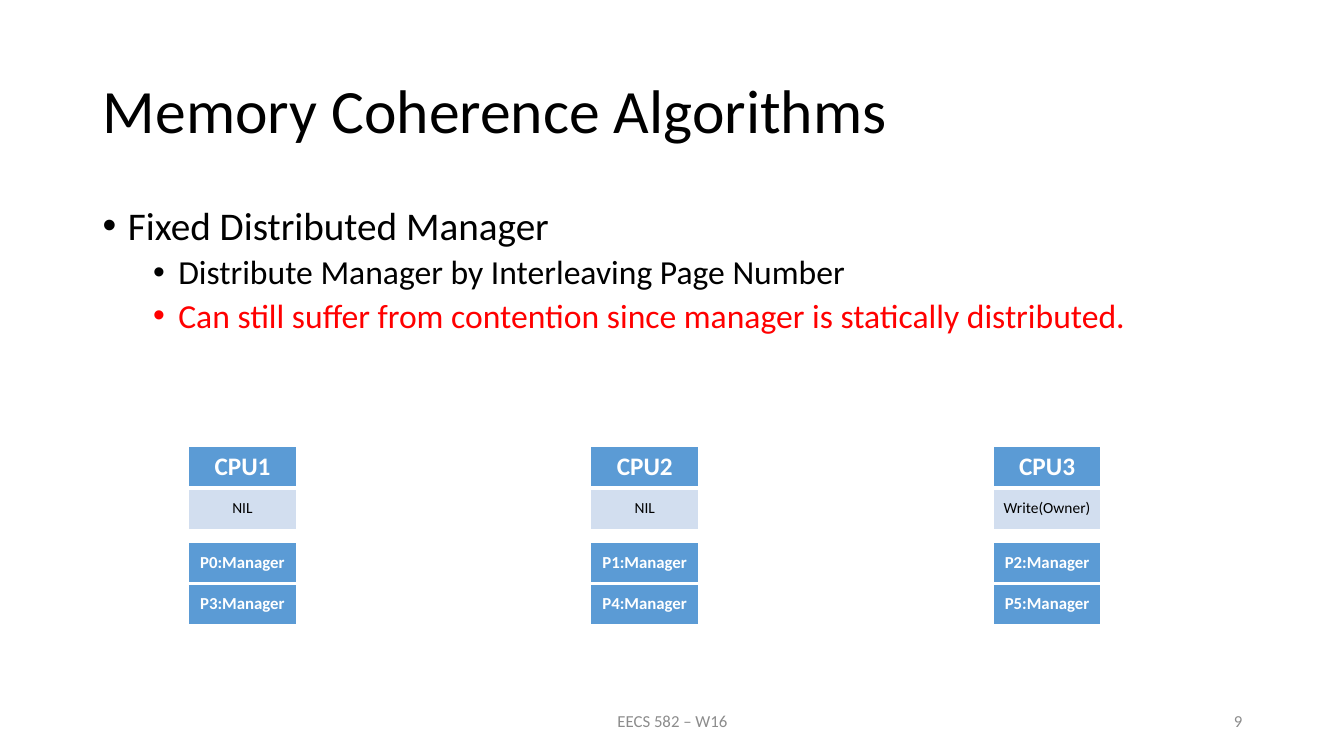
from dataclasses import dataclass

from lxml import etree
from pptx import Presentation
from pptx.dml.color import RGBColor
from pptx.enum.text import MSO_ANCHOR, MSO_AUTO_SIZE, PP_ALIGN
from pptx.oxml.ns import qn
from pptx.util import Pt

PX = 9144
TOP, MIDDLE = MSO_ANCHOR.TOP, MSO_ANCHOR.MIDDLE
LEFT, CENTER, RIGHT = PP_ALIGN.LEFT, PP_ALIGN.CENTER, PP_ALIGN.RIGHT
NO_FIT = MSO_AUTO_SIZE.NONE


@dataclass(frozen=True)
class Theme:
    font: str = "Calibri"
    black: str = "000000"
    white: str = "FFFFFF"
    red: str = "FF0000"
    gray: str = "8C8C8C"
    blue: str = "5B9BD5"
    pale: str = "D2DEEF"
    title: int = 44
    lead: int = 28
    point: int = 24
    head: int = 18
    small: int = 12
    state: int = 11


THEME = Theme()

POINTS = [
    ("Fixed Distributed Manager", 0, THEME.black),
    ("Distribute Manager by Interleaving Page Number", 1, THEME.black),
    ("Can still suffer from contention since manager is statically distributed.",
     1, THEME.red),
]
NODES = [
    ("CPU1", "NIL", "P0:Manager", "P3:Manager"),
    ("CPU2", "NIL", "P1:Manager", "P4:Manager"),
    ("CPU3", "Write(Owner)", "P2:Manager", "P5:Manager"),
]


def scale(*sizes):
    return [size * PX for size in sizes]


def style(para, size, color, bold=False, align=LEFT):
    para.alignment = align
    for run in para.runs:
        run.font.name = THEME.font
        run.font.size = Pt(size)
        run.font.bold = bold
        run.font.color.rgb = RGBColor.from_string(color)


def add_title(slide, text):
    title = slide.shapes.title
    title.left, title.top, title.width, title.height = scale(92, 40, 1150, 145)
    frame = title.text_frame
    frame.text = text
    frame.auto_size = NO_FIT
    frame.vertical_anchor = MIDDLE
    para = frame.paragraphs[0]
    para.line_spacing = 0.9
    style(para, THEME.title, THEME.black)


def add_box(slide, box, anchor):
    frame = slide.shapes.add_textbox(*scale(*box)).text_frame
    frame.word_wrap = True
    frame.vertical_anchor = anchor
    return frame


def add_bullet(para, level):
    props = para._p.get_or_add_pPr()
    props.set("marL", str((25 + 50 * level) * PX))
    props.set("indent", str(-25 * PX))
    etree.SubElement(props, qn("a:buFont"), typeface="Arial")
    etree.SubElement(props, qn("a:buChar"), char="•")


def add_points(slide, points):
    frame = add_box(slide, (92, 200, 1150, 476), TOP)
    frame.text = "\n".join(text for text, _, _ in points)
    for para, (_, level, color) in zip(frame.paragraphs, points):
        para.level = level
        para.line_spacing = 0.9
        para.space_before = Pt(5 if level else 10)
        style(para, THEME.point if level else THEME.lead, color)
        add_bullet(para, level)


def add_note(slide, text, box, align):
    frame = add_box(slide, box, MIDDLE)
    frame.text = text
    style(frame.paragraphs[0], THEME.small, THEME.gray, align=align)


def add_edges(cell, widths):
    props = cell._tc.get_or_add_tcPr()
    for spot, (side, width) in enumerate(widths.items()):
        line = etree.Element(qn(f"a:ln{side}"), w=str(Pt(width)))
        fill = etree.SubElement(line, qn("a:solidFill"))
        etree.SubElement(fill, qn("a:srgbClr"), val=THEME.white)
        props.insert(spot, line)


def add_stack(slide, left, top, rows):
    table = slide.shapes.add_table(
        len(rows), 1, *scale(left, top, 107, 41 * len(rows))).table
    table.horz_banding = False
    last = len(rows) - 1
    for index, (text, size, color, fill, bold, anchor) in enumerate(rows):
        cell = table.cell(index, 0)
        cell.text_frame.text = text
        cell.vertical_anchor = anchor
        cell.fill.solid()
        cell.fill.fore_color.rgb = RGBColor.from_string(fill)
        style(cell.text_frame.paragraphs[0], size, color, bold, CENTER)
        add_edges(cell, {"L": 1, "R": 1, "T": 3 if index else 1,
                         "B": 1 if index == last else 3})


def add_node(slide, left, name, state, *pages):
    add_stack(slide, left, 443, [
        (name, THEME.head, THEME.white, THEME.blue, True, TOP),
        (state, THEME.state, THEME.black, THEME.pale, False, MIDDLE),
    ])
    add_stack(slide, left, 538, [
        (page, THEME.small, THEME.white, THEME.blue, True, MIDDLE)
        for page in pages
    ])


def main():
    deck = Presentation()
    deck.slide_width, deck.slide_height = scale(1333, 750)
    slide = deck.slides.add_slide(deck.slide_layouts.get_by_name("Title Only"))
    add_title(slide, "Memory Coherence Algorithms")
    add_points(slide, POINTS)
    add_note(slide, "EECS 582 – W16", (442, 695, 450, 40), CENTER)
    add_note(slide, "9", (942, 695, 300, 40), RIGHT)
    for index, node in enumerate(NODES):
        add_node(slide, 187 + 399 * index, *node)
    deck.save("out.pptx")


if __name__ == "__main__":
    main()
